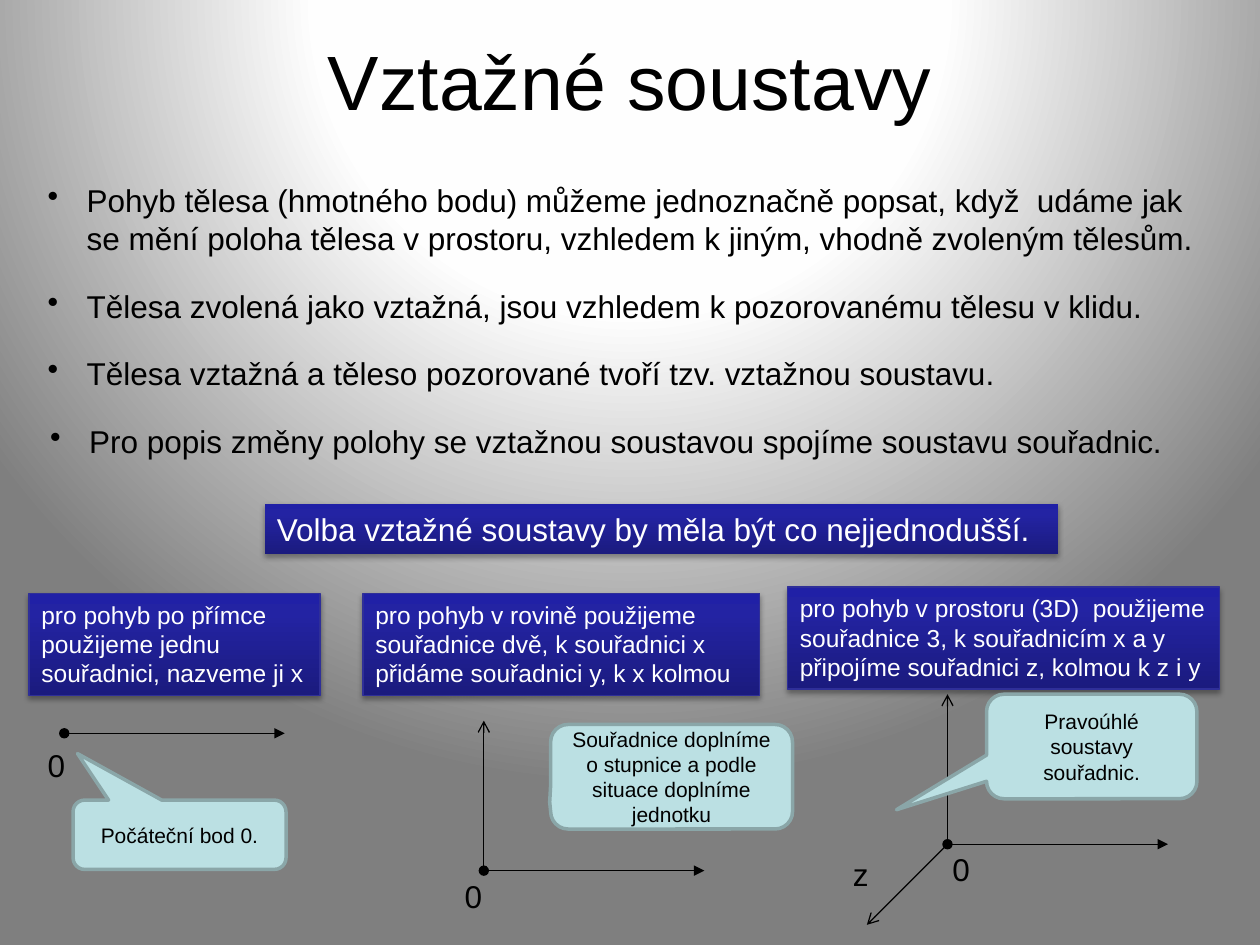
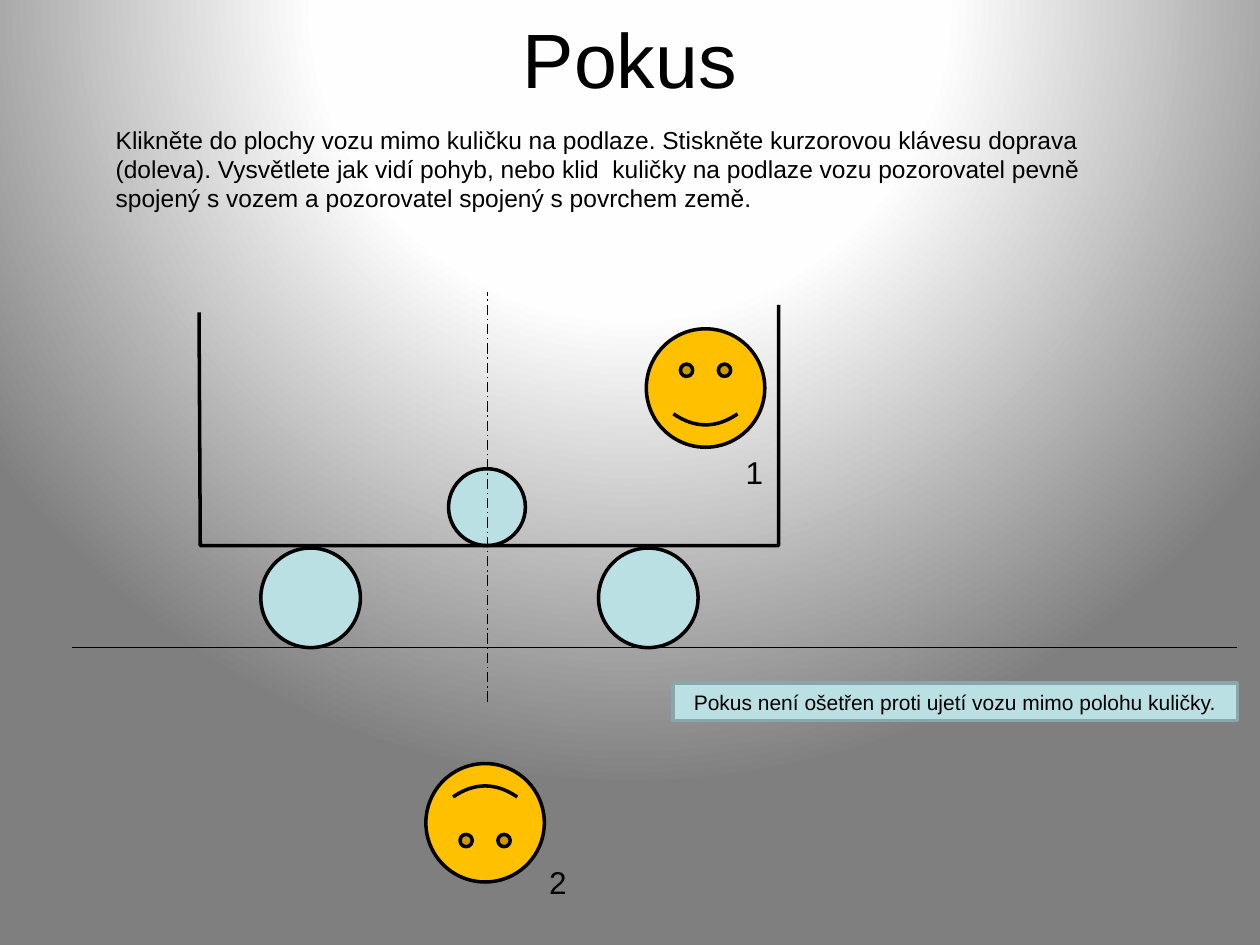
from dataclasses import dataclass

from pptx import Presentation
from pptx.dml.color import RGBColor
from pptx.enum.dml import MSO_LINE
from pptx.enum.shapes import MSO_CONNECTOR, MSO_SHAPE
from pptx.enum.text import MSO_ANCHOR, MSO_AUTO_SIZE, PP_ALIGN
from pptx.oxml import parse_xml
from pptx.oxml.ns import nsdecls, qn
from pptx.oxml.xmlchemy import OxmlElement
from pptx.util import Pt

SCALE = 9144  # EMU in one px, 100 px to the inch


@dataclass(frozen=True)
class Theme:
    font: str = "Arial"
    ink: str = "000000"
    light: str = "FFFFFF"
    pale: str = "BBE0E3"
    rim: str = "8AA6A8"
    edge: str = "2F2F98"
    gold: str = "FFC000"
    back: tuple = ((0, "FFFFFF"), (40, "FEFEFE"), (100, "7F7F7F"))
    navy: tuple = ((0, "1B1B7E"), (80, "2323A3"), (100, "2020A6"))
    head: int = 44
    body: int = 18
    note: int = 14
    tip: int = 12
    thin: float = 0.75
    bold: float = 2


T = Theme()


# ---- Basic parts ----
def px(*sizes):
    return [size * SCALE for size in sizes]


def shift(box, left, top, width, height):
    return box[0] + left, box[1] + top, width, height


def blend(stops, course):
    marks = "".join(
        f'<a:gs pos="{pos * 1000}"><a:srgbClr val="{hue}"/></a:gs>' for pos, hue in stops
    )
    return parse_xml(
        f'<a:gradFill {nsdecls("a")} rotWithShape="1"><a:gsLst>{marks}</a:gsLst>{course}</a:gradFill>'
    )


def write(shape, text, size, hue=T.ink, mid=False, grow=True):
    frame = shape.text_frame
    frame.text = text
    frame.word_wrap = True
    frame.vertical_anchor = MSO_ANCHOR.MIDDLE if mid else MSO_ANCHOR.TOP
    if grow:
        frame.auto_size = MSO_AUTO_SIZE.SHAPE_TO_FIT_TEXT
    line = frame.paragraphs[0]
    line.alignment = PP_ALIGN.CENTER if mid else PP_ALIGN.LEFT
    font = line.runs[0].font
    font.name, font.size = T.font, Pt(size)
    font.color.rgb = RGBColor.from_string(hue)
    return line


def label(shapes, box, text, size=T.body):
    return write(shapes.add_textbox(*px(*box)), text, size)


def stroke(line, hue, width):
    line.color.rgb = RGBColor.from_string(hue)
    line.width = Pt(width)


def solid(shapes, kind, box, fill=T.pale, rim=T.ink):
    shape = shapes.add_shape(kind, *px(*box))
    shape.shadow.inherit = False
    shape.fill.solid()
    shape.fill.fore_color.rgb = RGBColor.from_string(fill)
    stroke(shape.line, rim, T.bold)
    return shape


def rule(shapes, start, end, head=None, tail=None, dash=None):
    link = shapes.add_connector(MSO_CONNECTOR.STRAIGHT, *px(*start, *end))
    stroke(link.line, T.ink, T.thin)
    if dash:
        link.line.dash_style = dash
    for tag, kind in (("a:headEnd", head), ("a:tailEnd", tail)):
        if kind:
            tip = OxmlElement(tag)
            tip.set("type", kind)
            link.line._get_or_add_ln().append(tip)
    link._element.spPr.append(OxmlElement("a:effectLst"))


# ---- Shared look ----
def backdrop(deck):
    fill = deck.slide_master.background.fill
    fill.background()
    old = deck.slide_master.element.find(".//" + qn("p:bgPr"))[0]
    course = (
        '<a:path path="circle"><a:fillToRect l="50000" t="-80000" r="50000" b="180000"/></a:path>'
    )
    old.getparent().replace(old, blend(T.back, course))


def title(shapes, box, text):
    write(shapes.add_textbox(*px(*box)), text, T.head, mid=True, grow=False)


# ---- Reference frames ----
def bullet(shapes, box, text):
    props = label(shapes, box, text)._p.get_or_add_pPr()
    props.set("marL", str(31 * SCALE))
    props.set("indent", str(-31 * SCALE))
    mark = OxmlElement("a:buChar")
    mark.set("char", "•")
    props.append(mark)


def panel(shapes, box, text, size=T.note, rim=T.edge):
    shape = shapes.add_shape(MSO_SHAPE.RECTANGLE, *px(*box))
    shape.fill.solid()
    if rim:
        stroke(shape.line, rim, T.thin)
    else:
        shape.line.fill.background()
    props = shape._element.spPr
    props.replace(
        props.find(qn("a:solidFill")), blend(T.navy, '<a:lin ang="16200000" scaled="0"/>')
    )
    props.append(parse_xml(
        f'<a:effectLst {nsdecls("a")}><a:outerShdw blurRad="{Pt(3.1)}" dist="{Pt(1.8)}" '
        'dir="5400000" rotWithShape="0"><a:srgbClr val="000000"><a:alpha val="35000"/>'
        "</a:srgbClr></a:outerShdw></a:effectLst>"
    ))
    write(shape, text, size, T.light)


def axes(shapes, start, zero, count):
    left, top = start
    ways = ((175, 0, "oval", "triangle"), (0, -119, None, "arrow"), (-64, 64, None, "arrow"))
    for right, down, head, tail in ways[:count]:
        rule(shapes, start, (left + right, top + down), head, tail)
    if count == 3:
        label(shapes, (left - 85, top + 4, 21, 40), "z")
    label(shapes, (left + zero[0], top + zero[1], 23, 40), "0")


def callout(shapes, box, text, point):
    shape = solid(shapes, MSO_SHAPE.ROUNDED_RECTANGULAR_CALLOUT, box, rim=T.rim)
    for spot, value in enumerate((*point, 0.167)):
        shape.adjustments[spot] = value
    write(shape, text, T.tip, mid=True, grow=False)


def frames(slide):
    shapes = slide.shapes
    title(shapes, (50, 1, 900, 125), "Vztažné soustavy")
    for box, text in (
        ((28, 139, 940, 71), "Pohyb tělesa (hmotného bodu) můžeme jednoznačně popsat, když  udáme jak "
         "se mění poloha tělesa v prostoru, vzhledem k jiným, vhodně zvoleným tělesům."),
        ((28, 223, 925, 40), "Tělesa zvolená jako vztažná, jsou vzhledem k pozorovanému tělesu v klidu."),
        ((28, 276, 925, 40), "Tělesa vztažná a těleso pozorované tvoří tzv. vztažnou soustavu."),
        ((30, 330, 925, 40), "Pro popis změny polohy se vztažnou soustavou spojíme soustavu souřadnic."),
    ):
        bullet(shapes, box, text)
    panel(shapes, (210, 400, 630, 40),
          "Volba vztažné soustavy by měla být co nejjednodušší.", T.body, None)

    # One panel with its axes for each number of dimensions
    for count, (box, text, start, zero) in enumerate((
        ((23, 471, 231, 81), "pro pohyb po přímce použijeme jednu souřadnici, nazveme ji x",
         (51, 582), (-23, 5)),
        ((288, 471, 315, 81), "pro pohyb v rovině použijeme souřadnice dvě, k souřadnici x "
         "přidáme souřadnici y, k x kolmou", (384, 691), (-25, 0)),
        ((625, 466, 343, 81), "pro pohyb v prostoru (3D)  použijeme souřadnice 3, k souřadnicím x a y "
         "připojíme souřadnici z, kolmou k z i y", (752, 670), (-6, 0)),
    ), 1):
        panel(shapes, box, text)
        axes(shapes, start, zero, count)

    # Callouts lie over the axes
    for box, text, point in (
        ((437, 575, 192, 83), "Souřadnice doplníme o stupnice a podle situace doplníme jednotku",
         (-0.504, 0.242)),
        ((58, 635, 169, 55), "Počáteční bod 0.", (-0.479, -1.171)),
        ((783, 551, 167, 83), "Pravoúhlé soustavy souřadnic.", (-0.928, 0.605)),
    ):
        callout(shapes, box, text, point)


# ---- Experiment ----
def cart(shapes, box):
    parts = shapes.add_group_shape().shapes
    left, top, width, height = box
    right, floor = left + width, top + height
    body = parts.build_freeform(*px(left, top + 6), scale=1.0)
    body.add_line_segments(
        [px(*spot) for spot in ((left + 1, floor), (right, floor), (right, top))], close=False
    )
    shell = body.convert_to_shape()
    shell.shadow.inherit = False
    shell.fill.background()
    stroke(shell.line, T.ink, T.bold)
    for wheel in (49, 317):
        solid(parts, MSO_SHAPE.OVAL, shift(box, wheel, height + 2, 79, 79))
    solid(parts, MSO_SHAPE.SMILEY_FACE, shift(box, 355, 19, 94, 94), T.gold)
    label(parts, shift(box, 424, 113, 26, 40), "1")


def trial(slide):
    shapes = slide.shapes
    title(shapes, (50, 6, 900, 79), "Pokus")
    solid(shapes, MSO_SHAPE.OVAL, (356, 372, 61, 61))
    solid(shapes, MSO_SHAPE.SMILEY_FACE, (338, 606, 94, 94), T.gold).rotation = 180
    rule(shapes, (57, 514), (982, 514))
    rule(shapes, (387, 557), (387, 232), dash=MSO_LINE.LONG_DASH_DOT)
    label(shapes, (82, 94, 856, 81),
          "Klikněte do plochy vozu mimo kuličku na podlaze. Stiskněte kurzorovou klávesu doprava "
          "(doleva). Vysvětlete jak vidí pohyb, nebo klid  kuličky na podlaze vozu pozorovatel pevně "
          "spojený s vozem a pozorovatel spojený s povrchem země.", T.note)
    cart(shapes, (158, 242, 460, 191))
    label(shapes, (426, 680, 35, 40), "2")
    note = solid(shapes, MSO_SHAPE.RECTANGLE, (534, 542, 448, 30), rim=T.rim)
    write(note, "Pokus není ošetřen proti ujetí vozu mimo polohu kuličky.", T.tip,
          mid=True, grow=False)


def main():
    deck = Presentation()
    deck.slide_width, deck.slide_height = px(1000, 750)
    backdrop(deck)
    for build in (frames, trial):
        build(deck.slides.add_slide(deck.slide_layouts[6]))
    deck.save("out.pptx")


if __name__ == "__main__":
    main()
